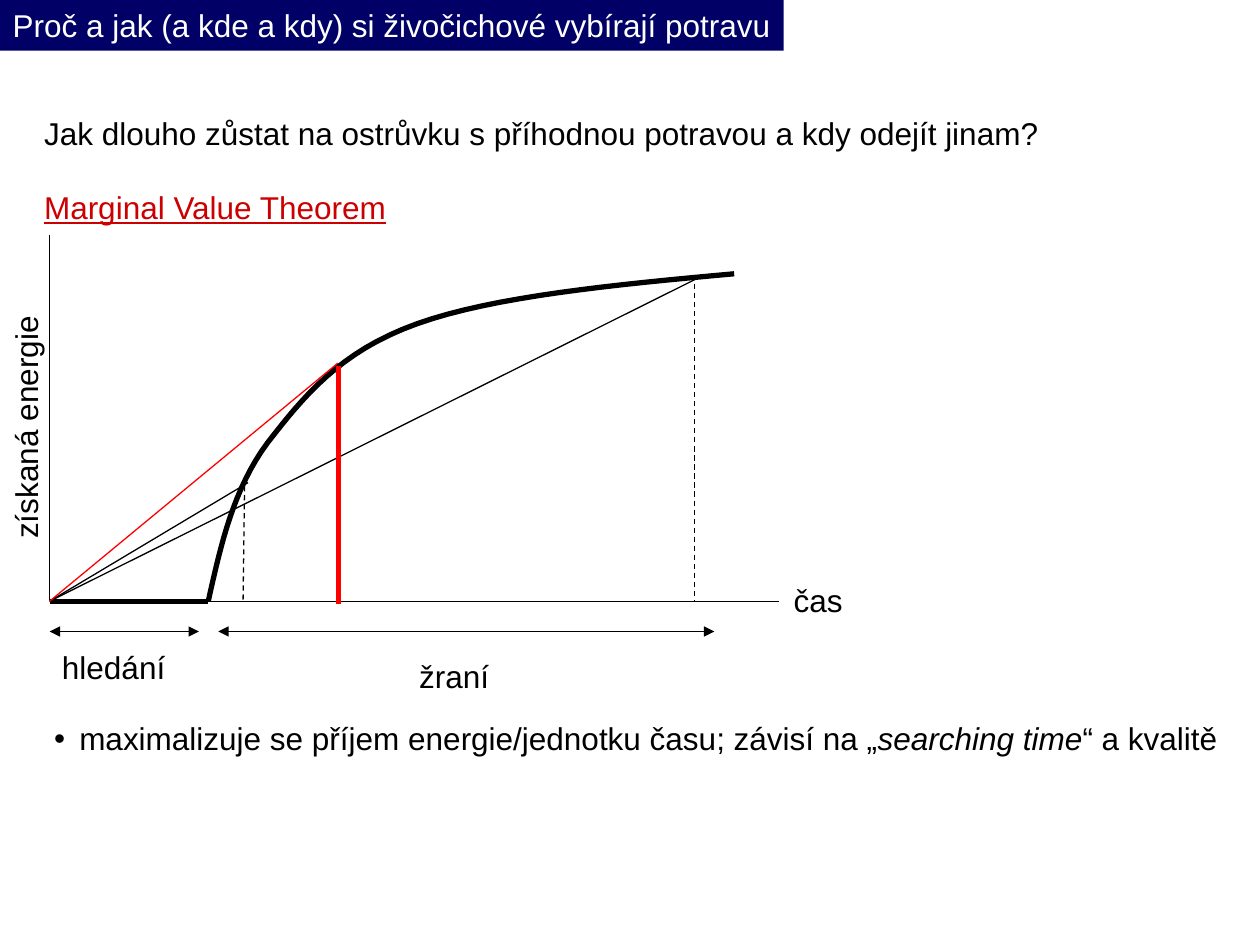
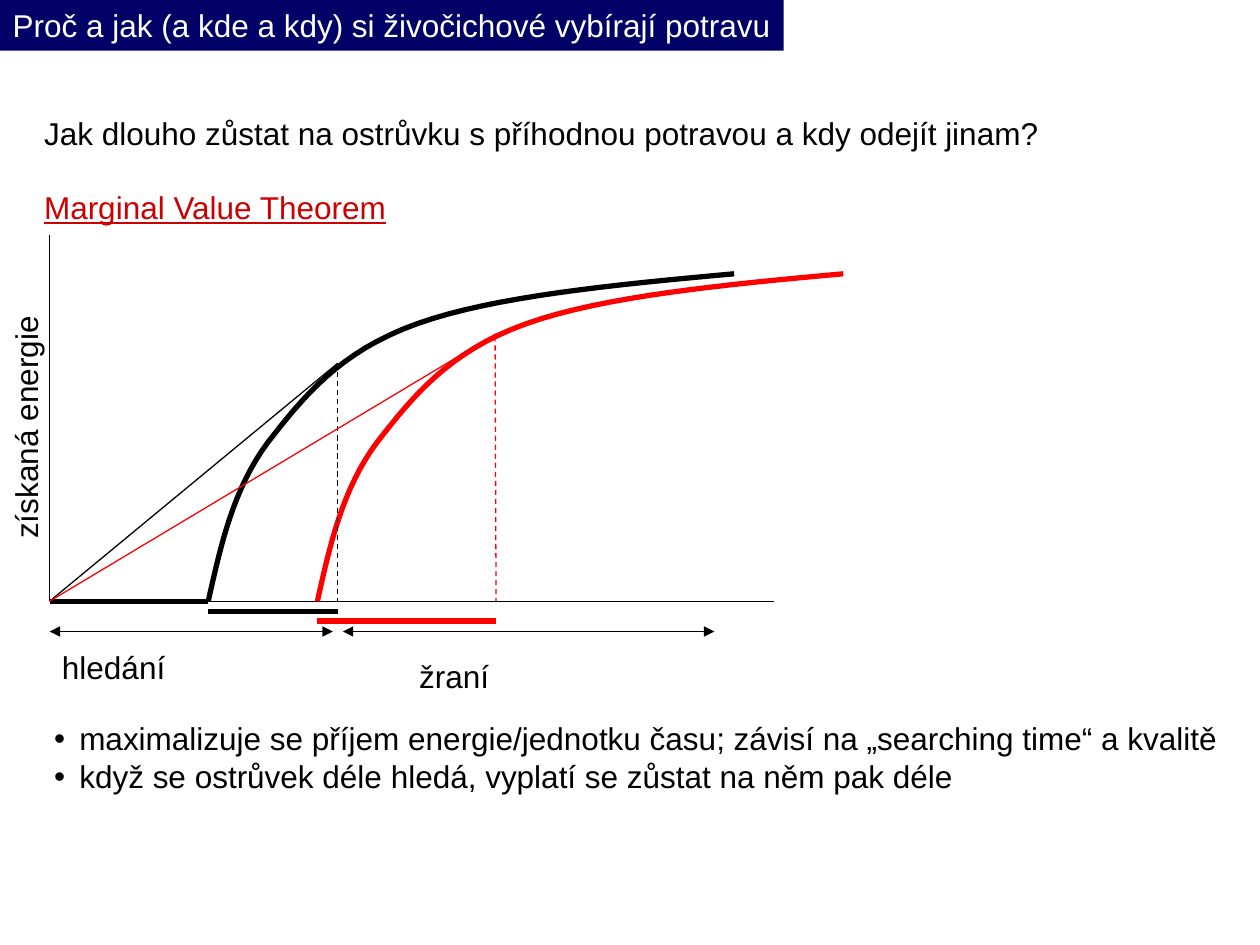
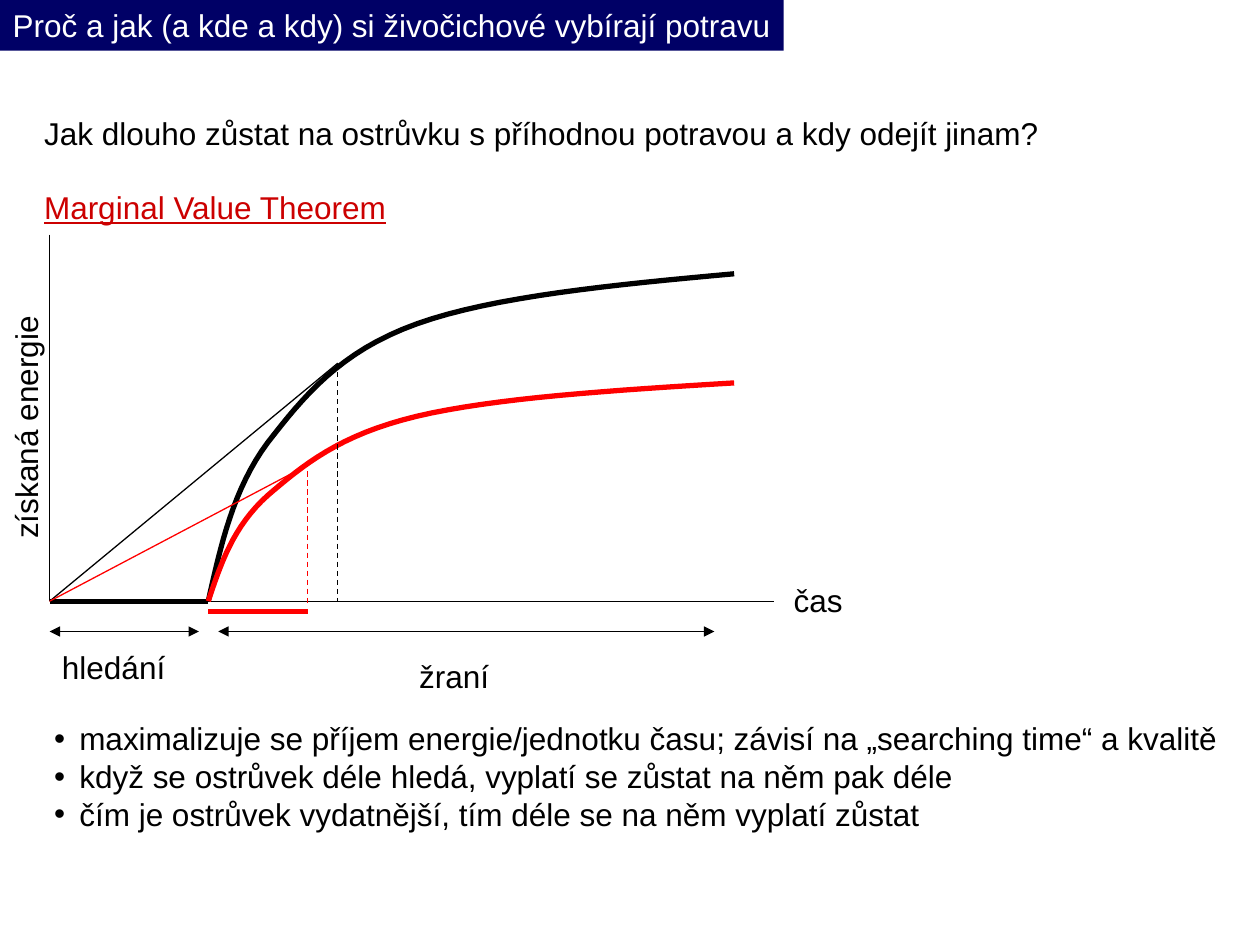
from dataclasses import dataclass

from lxml import etree
from pptx import Presentation
from pptx.dml.color import RGBColor
from pptx.enum import dml, shapes, text
from pptx.oxml.ns import qn
from pptx.util import Cm, Pt


@dataclass(frozen=True)
class Theme:
    font: str = "Arial"
    size: float = 18
    blank_line: float = 20.7
    thin: float = 0.75
    bold: float = 3
    black: str = "000000"
    white: str = "FFFFFF"
    red: str = "FF0000"
    heading: str = "CC0000"
    band: str = "000066"


T = Theme()

TITLE = "Proč a jak (a kde a kdy) si živočichové vybírají potravu"
QUESTION = "Jak dlouho zůstat na ostrůvku s příhodnou potravou a kdy odejít jinam?"
THEOREM = "Marginal Value Theorem"
QUALITY = "maximalizuje se příjem energie/jednotku času; závisí na „{}“ a kvalitě"
LONGER_SEARCH = "když se ostrůvek déle hledá, vyplatí se zůstat na něm pak déle"
RICHER_PATCH = "čím je ostrůvek vydatnější, tím déle se na něm vyplatí zůstat"

# Diagram geometry in centimetres
X0, Y0 = 1.0, 12.12          # origin of the axes
AXIS_TOP = 4.73
PATCH_X = 4.2                # arrival at the patch
BEST = (6.81, 7.32)          # tangent point of the basic gain curve
ARROW_Y = 12.73
EATING_END = 14.4
STAY_Y = (12.32, 12.52)      # bars for the time spent in the patch
# Bézier points of the gain curve: (time, energy) from the arrival
GAIN = [(0, 0), (0.25, 1.12), (0.5, 2.26), (1.2, 3.2), (1.91, 4.11),
        (2.64, 5.03), (4.2, 5.59), (5.77, 6.15), (8.2, 6.38), (10.6, 6.6)]
STEPS = 16                   # straight pieces for each Bézier segment

# Curves: (arrival, energy scale, colour)
# Lines: (x1, y1, x2, y2, colour, style)
BASIC = (PATCH_X, 1, T.black)
BASIC_TANGENT = [(X0, Y0, *BEST, T.black, "thin"),
                 (*BEST, BEST[0], Y0, T.black, "dash")]
SLIDES = [
    dict(curves=[BASIC], axis_end=15.7, search_end=4.01, eating_start=4.4, time_label=True,
         lines=[(X0, Y0, 14.2, 5.54, T.black, "thin"),
                (X0, Y0, 5.0, 9.73, T.black, "thin"),
                (X0, Y0, *BEST, T.red, "thin"),
                (4.93, 9.8, 4.9, Y0, T.black, "dash"),
                (14.0, 5.54, 14.0, Y0, T.black, "dash"),
                (6.83, 7.37, 6.83, 12.17, T.red, "bold")],
         bullets=[QUALITY.format("*searching time*")]),
    dict(curves=[BASIC, (6.4, 1, T.red)], axis_end=15.6, search_end=6.71, eating_start=6.91,
         time_label=False,
         lines=BASIC_TANGENT + [
             (X0, Y0, 10.0, 6.73, T.red, "thin"),
             (9.98, 6.78, 10.0, Y0, T.red, "dash"),
             (PATCH_X, STAY_Y[0], BEST[0], STAY_Y[0], T.black, "bold"),
             (6.4, STAY_Y[1], 10.0, STAY_Y[1], T.red, "bold")],
         bullets=[QUALITY.format("searching time"), LONGER_SEARCH]),
    dict(curves=[BASIC, (PATCH_X, 2 / 3, T.red)], axis_end=15.6, search_end=4.01,
         eating_start=4.4, time_label=True,
         lines=BASIC_TANGENT + [
             (X0, Y0, 6.25, 9.35, T.red, "thin"),
             (6.2, 9.32, 6.2, 12.17, T.red, "dash"),
             (PATCH_X, STAY_Y[0], 6.2, STAY_Y[0], T.red, "bold")],
         bullets=[QUALITY.format("searching time"), LONGER_SEARCH, RICHER_PATCH]),
]


def rgb(value):
    return RGBColor.from_string(value)


def style_font(font, colour=T.black):
    font.name, font.size, font.color.rgb = T.font, Pt(T.size), rgb(colour)


def add_text(s, left, top, width, height, content, rotation=0):
    box = s.shapes.add_textbox(Cm(left), Cm(top), Cm(width), Cm(height))
    box.rotation = rotation
    tf = box.text_frame
    tf.word_wrap = False
    tf.text = content
    for p in tf.paragraphs:
        for r in p.runs:
            style_font(r.font)
    return tf


def add_title(s):
    title = s.shapes.title
    title.left, title.top, title.width, title.height = Cm(0), Cm(0), Cm(15.8), Cm(1.02)
    title.fill.solid()
    title.fill.fore_color.rgb = rgb(T.band)
    tf = title.text_frame
    tf.text = TITLE
    tf.word_wrap = False
    tf.auto_size = text.MSO_AUTO_SIZE.NONE
    tf.vertical_anchor = text.MSO_ANCHOR.MIDDLE
    p = tf.paragraphs[0]
    p.alignment = text.PP_ALIGN.LEFT
    style_font(p.runs[0].font, T.white)


def add_line(s, x1, y1, x2, y2, colour=T.black, style="thin"):
    line = s.shapes.add_connector(shapes.MSO_CONNECTOR.STRAIGHT, Cm(x1), Cm(y1), Cm(x2), Cm(y2))
    line.line.color.rgb = rgb(colour)
    line.line.width = Pt(T.bold if style == "bold" else T.thin)
    if style == "dash":
        line.line.dash_style = dml.MSO_LINE.DASH
    if style == "arrow":
        for end in ("a:headEnd", "a:tailEnd"):
            etree.SubElement(line.line._get_or_add_ln(), qn(end), type="triangle")
    etree.SubElement(line._element.spPr, qn("a:effectLst"))


def bezier(p0, p1, p2, p3, t):
    u = 1 - t
    return tuple(u**3 * a + 3 * u * u * t * b + 3 * u * t * t * c + t**3 * d
                 for a, b, c, d in zip(p0, p1, p2, p3))


def add_curve(s, arrival, scale, colour):
    points = [(Cm(arrival + x), Cm(Y0 - scale * y))
              for i in range(0, len(GAIN) - 1, 3)
              for x, y in (bezier(*GAIN[i:i + 4], k / STEPS) for k in range(1, STEPS + 1))]
    builder = s.shapes.build_freeform(Cm(arrival), Cm(Y0))
    builder.add_line_segments(points, close=False)
    sp = builder.convert_to_shape()
    sp.shadow.inherit = False
    sp.fill.background()
    sp.line.color.rgb = rgb(colour)
    sp.line.width = Pt(T.bold)


def add_bullets(s, bullets):
    """Text between asterisks is set in italics."""
    tf = add_text(s, 0.84, 14.38, 23.95, 0.25 + 0.76 * len(bullets), "")
    for i, bullet in enumerate(bullets):
        p = tf.add_paragraph() if i else tf.paragraphs[0]
        pPr = p._p.get_or_add_pPr()
        pPr.set("marL", str(Cm(0.51)))
        pPr.set("indent", str(-Cm(0.51)))
        etree.SubElement(pPr, qn("a:buFont"), typeface=T.font)
        etree.SubElement(pPr, qn("a:buChar"), char="•")
        for k, part in enumerate(bullet.split("*")):
            r = p.add_run()
            r.text = part
            style_font(r.font)
            r.font.italic = k % 2 == 1


def add_diagram(s, d):
    add_line(s, X0, AXIS_TOP, X0, Y0)
    add_line(s, X0, Y0, d["axis_end"], Y0)
    add_line(s, X0, Y0, PATCH_X, Y0, style="bold")
    add_line(s, X0, ARROW_Y, d["search_end"], ARROW_Y, style="arrow")
    add_line(s, d["eating_start"], ARROW_Y, EATING_END, ARROW_Y, style="arrow")
    for curve in d["curves"]:
        add_curve(s, *curve)
    for line in d["lines"]:
        add_line(s, *line)
    add_text(s, -1.98, 8.1, 5.0, 1.02, "získaná energie", rotation=270)
    add_text(s, 1.0, 12.93, 2.59, 1.02, "hledání")
    add_text(s, 8.2, 13.13, 1.93, 1.02, "žraní")
    if d["time_label"]:
        add_text(s, 15.75, 11.58, 1.5, 1.02, "čas")


def main():
    prs = Presentation()
    prs.slide_width, prs.slide_height = Cm(25.4), Cm(19.05)
    for d in SLIDES:
        s = prs.slides.add_slide(prs.slide_layouts[5])
        add_title(s)
        tf = add_text(s, 0.64, 2.18, 20.55, 2.54, f"{QUESTION}\n{THEOREM}")
        theorem = tf.paragraphs[1]
        theorem.space_before = Pt(T.blank_line)
        theorem.runs[0].font.underline = True
        theorem.runs[0].font.color.rgb = rgb(T.heading)
        add_diagram(s, d)
        add_bullets(s, d["bullets"])
    prs.save("out.pptx")


if __name__ == "__main__":
    main()
